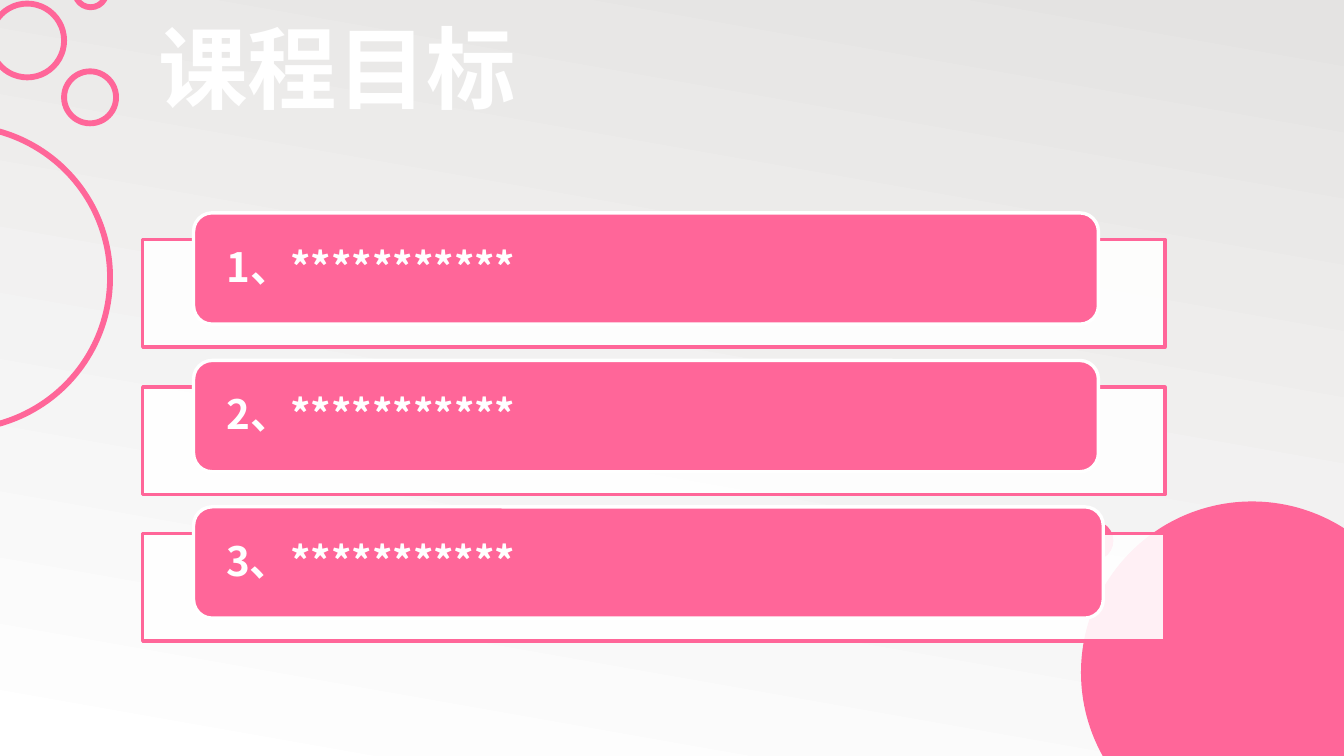
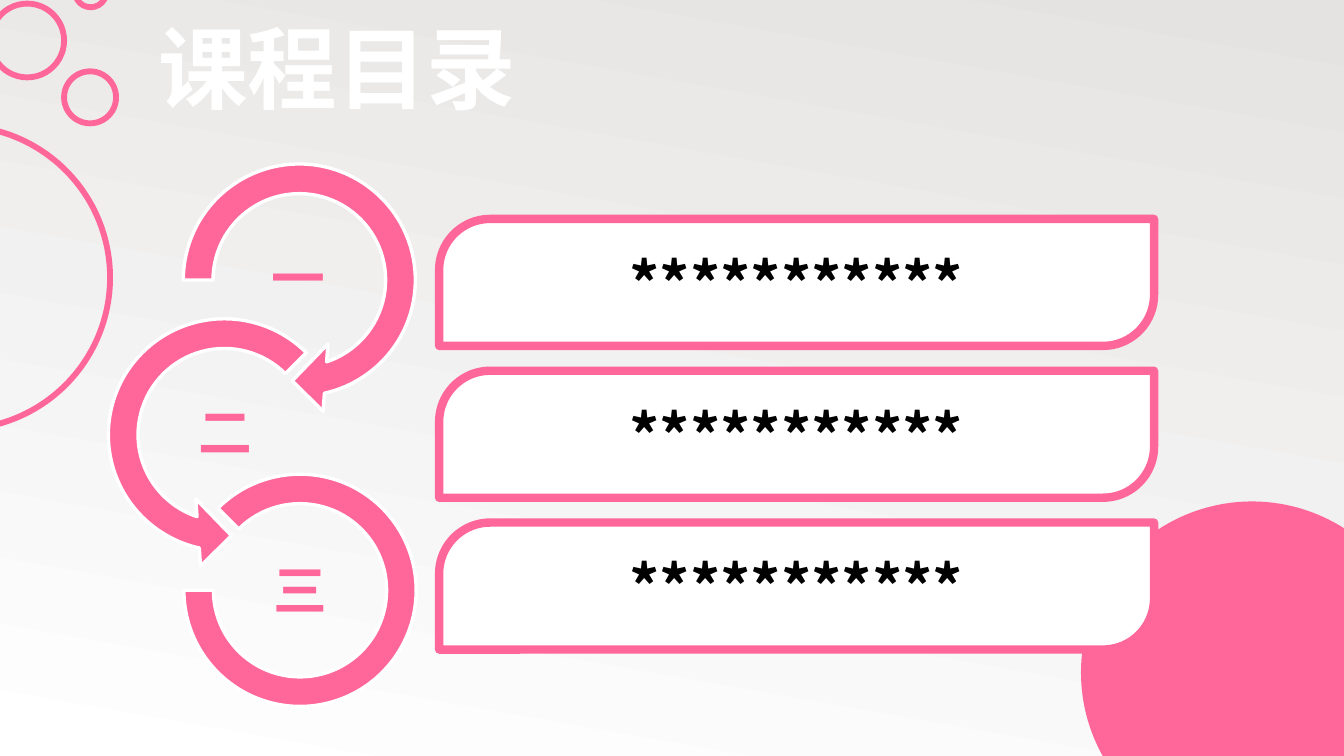
from lxml.etree import SubElement
from pptx import Presentation
from pptx.dml.color import RGBColor
from pptx.enum.shapes import MSO_SHAPE
from pptx.enum.text import MSO_ANCHOR, PP_ALIGN
from pptx.oxml.ns import qn
from pptx.util import Inches, Pt

COLORS = {"pink": "FF6699", "white": "FFFFFF", "black": "000000", "gray": "E4E3E2"}
FONT = "Noto Sans CJK SC"
STARS = "***********"
RINGS = [(-1.6, 1.04, 2.51), (-0.08, 0.03, 0.61), (0.53, 0.59, 0.43), (0.62, -0.2, 0.26)]
DISCS = [(8.95, 4.16, 2.8), (8.89, 4.32, 0.3)]


def color(name):
    return RGBColor.from_string(COLORS[name])


class Deck:
    """Holds the presentation, its style and the current slide."""

    def __init__(self):
        self.presentation = Presentation()
        self.presentation.slide_width = Inches(11.11)
        self.presentation.slide_height = Inches(6.25)
        self.slide = None

    def add_slide(self, title):
        self.slide = self.presentation.slides.add_slide(self.presentation.slide_layouts[6])
        # Background
        fill = self.slide.background.fill
        fill.gradient()
        fill.gradient_angle = 260
        for stop, name, position in zip(fill.gradient_stops, ("gray", "white"), (0, 1)):
            stop.color.rgb = color(name)
            stop.position = position
        # Corner circles
        for left, top, size in DISCS:
            self.shape(MSO_SHAPE.OVAL, (left, top, size, size), "pink", "pink")
        for left, top, size in RINGS:
            self.shape(MSO_SHAPE.OVAL, (left, top, size, size), None, "pink", 3.5)
        # Title
        self.text_box((1.21, 0.1, 8.5, 0.91), title, 53.3, "white", (0.1, 0))

    def shape(self, kind, box, fill, line, width=2, adjustments=(), opacity=None):
        shape = self.slide.shapes.add_shape(kind, *map(Inches, box))
        shape.shadow.inherit = False
        if fill:
            shape.fill.solid()
            shape.fill.fore_color.rgb = color(fill)
        else:
            shape.fill.background()
        if opacity:
            fill_color = shape._element.spPr.find(qn("a:solidFill"))[0]
            SubElement(fill_color, qn("a:alpha"), val=str(opacity * 1000))
        shape.line.color.rgb = color(line)
        shape.line.width = Pt(width)
        for index, value in enumerate(adjustments):
            shape.adjustments[index] = value
        return shape

    def set_text(self, shape, text, size, text_color, align, **paragraph_format):
        frame = shape.text_frame
        frame.word_wrap = True
        frame.vertical_anchor = MSO_ANCHOR.MIDDLE
        paragraph = frame.paragraphs[0]
        for name, value in {"alignment": align, **paragraph_format}.items():
            setattr(paragraph, name, value)
        run = paragraph.add_run()
        run.text = text
        run.font.color.rgb = color(text_color)
        for name, value in {"size": Pt(size), "bold": True, "name": FONT}.items():
            setattr(run.font, name, value)
        SubElement(run._r.get_or_add_rPr(), qn("a:ea"), typeface=FONT)

    def text_box(self, box, text, size, text_color, insets, align=PP_ALIGN.LEFT,
                 **paragraph_format):
        shape = self.slide.shapes.add_textbox(*map(Inches, box))
        horizontal, vertical = map(Inches, insets)
        margins = {"margin_left": horizontal, "margin_right": horizontal,
                   "margin_top": vertical, "margin_bottom": vertical}
        for name, value in margins.items():
            setattr(shape.text_frame, name, value)
        self.set_text(shape, text, size, text_color, align, **paragraph_format)

    def goal(self, number, top, width):
        """A pale frame with a pink label on its upper edge."""
        self.shape(MSO_SHAPE.RECTANGLE, (1.18, top, 8.45, 0.89), "white", "pink", opacity=90)
        self.shape(MSO_SHAPE.ROUNDED_RECTANGLE, (1.6, top - 0.22, width, 0.92), "pink", "white")
        self.text_box((1.65, top - 0.17, width - 0.09, 0.83), f"{number}、{STARS}", 24, "white",
                      (0.22, 0), line_spacing=0.9, space_after=Pt(2))

    def step(self, numeral, kind, box, adjustments, label_left, label_top):
        """A curved arrow around a numeral."""
        self.shape(kind, box, "pink", "white", adjustments=adjustments)
        self.text_box((label_left, label_top, 1.24, 0.62), numeral, 32, "pink", (0.02, 0.02),
                      PP_ALIGN.CENTER, line_spacing=0.9, space_after=Pt(2))

    def card(self, top):
        shape = self.shape(MSO_SHAPE.ROUND_2_DIAG_RECTANGLE, (3.63, top, 5.91, 1.05),
                           "white", "pink", 5, (0.402, 0))
        self.set_text(shape, STARS, 35.6, "black", PP_ALIGN.CENTER)


def main():
    deck = Deck()

    # Course goals
    deck.add_slide("课程目标")
    for number, (top, width) in enumerate([(1.98, 7.48), (3.2, 7.48), (4.41, 7.52)], 1):
        deck.goal(number, top, width)

    # Course contents
    deck.add_slide("课程目录")
    deck.step("一", MSO_SHAPE.CIRCULAR_ARROW, (1.36, 1.2, 2.23, 2.23),
              (0.11, 11.423, 45, 108, 0.125), 1.85, 2.01)
    deck.step("二", MSO_SHAPE.LEFT_CIRCULAR_ARROW, (0.74, 2.48, 2.23, 2.23),
              (0.11, 11.423, 63, 189, 0.125), 1.24, 3.29)
    deck.step("三", MSO_SHAPE.BLOCK_ARC, (1.52, 3.92, 1.92, 1.92),
              (135, 108, 0.127), 1.86, 4.59)
    for row in range(3):
        deck.card(1.81 + 1.255 * row)

    deck.presentation.save("out.pptx")


if __name__ == "__main__":
    main()
